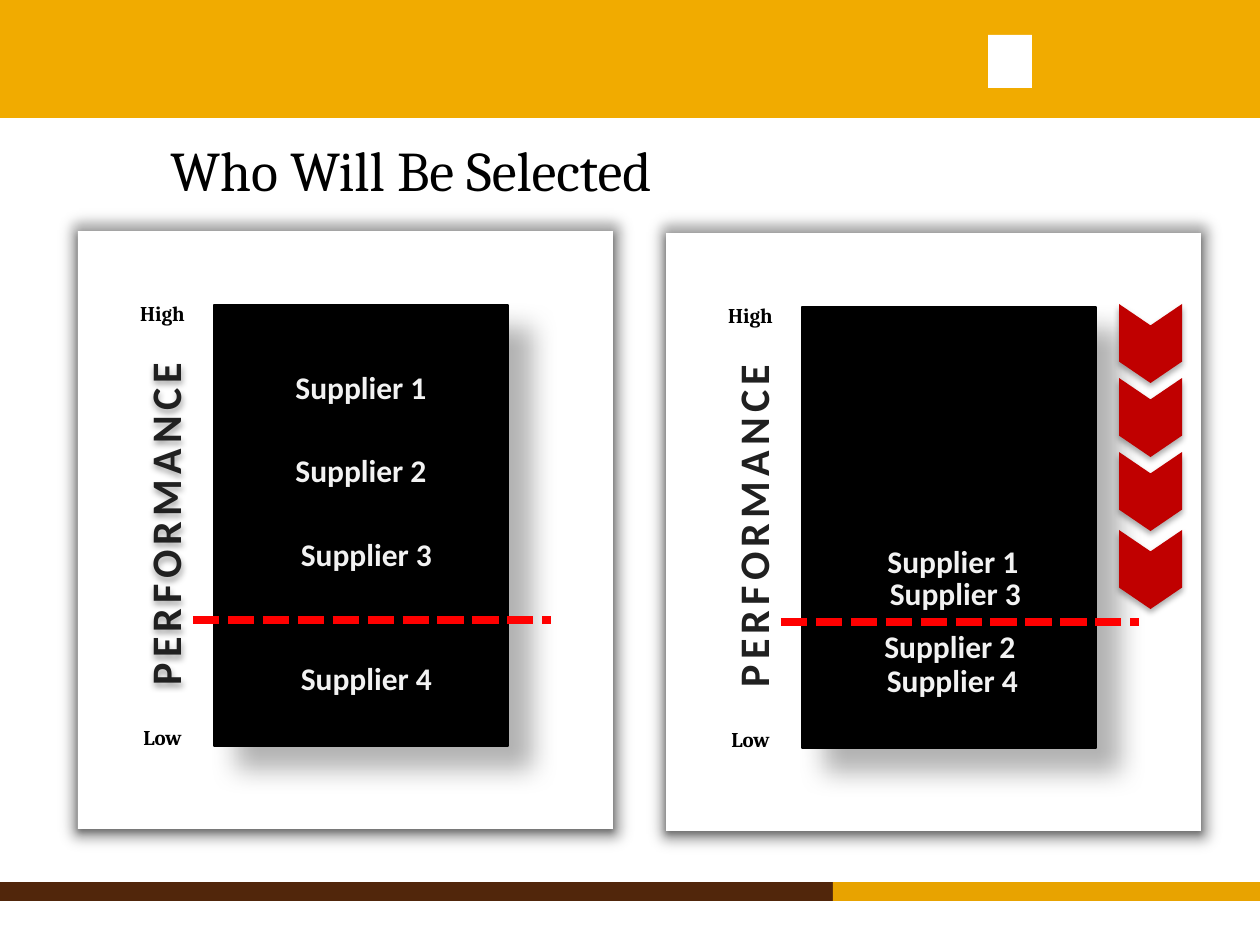
"""Build the supplier selection slide with two performance panels."""
from dataclasses import dataclass

from lxml import etree
from pptx import Presentation
from pptx.dml.color import RGBColor
from pptx.enum.dml import MSO_LINE
from pptx.enum.shapes import MSO_CONNECTOR, MSO_SHAPE
from pptx.enum.text import MSO_AUTO_SIZE, PP_ALIGN
from pptx.oxml.ns import qn
from pptx.util import Emu, Pt

RECT, CHEVRON = MSO_SHAPE.RECTANGLE, MSO_SHAPE.CHEVRON
STRAIGHT, DASHED = MSO_CONNECTOR.STRAIGHT, MSO_LINE.SQUARE_DOT
LEFT, CENTER = PP_ALIGN.LEFT, PP_ALIGN.CENTER
FIT = MSO_AUTO_SIZE.SHAPE_TO_FIT_TEXT


@dataclass(frozen=True)
class Theme:
    banner: str = "F1AB00"
    brown: str = "51260B"
    gold: str = "E8A300"
    black: str = "000000"
    white: str = "FFFFFF"
    frame: str = "A6A6A6"
    supplier: str = "F2F2F2"
    axis: str = "202020"
    cutoff: str = "FF0000"
    chevron: str = "C00000"
    serif: str = "Cambria"
    sans: str = "Calibri"
    title_size: int = 32
    axis_size: int = 24
    supplier_size: int = 18
    scale_size: int = 12


THEME = Theme()
CARD_SHADOW = dict(alpha=32, blur=3.5, distance=2.2, angle=90)
CHART_SHADOW = dict(alpha=30, blur=15, distance=18, angle=45)

TITLE = "Who Will Be Selected"
AXIS = "PERFORMANCE"
SCALE = [("High", 294), ("Low", 718)]
BANDS = [
    ((0, 0, 1260, 118), THEME.banner),
    ((988, 35, 44, 53), THEME.white),
    ((0, 882, 1008, 19), THEME.brown),
    ((833, 882, 427, 19), THEME.gold),
]
PANELS = [
    dict(origin=(0, 0), axis_shadow=CARD_SHADOW, chevron_tops=[], suppliers=[
        ("Supplier 1", 214, 362, 294),
        ("Supplier 2", 214, 445, 294),
        ("Supplier 3", 214, 529, 305),
        ("Supplier 4", 214, 653, 305),
    ]),
    dict(origin=(588, 2), axis_shadow=None, chevron_tops=[310, 384, 458, 536], suppliers=[
        ("Supplier 2", 215, 619, 294),
        ("Supplier 4", 212, 653, 305),
        ("Supplier 1", 218, 534, 294),
        ("Supplier 3", 215, 566, 305),
    ]),
]


def px(length):
    return Emu(round(length * 914400 / 126))


def place(box, origin):
    left, top, width, height = box
    return [px(n) for n in (left + origin[0], top + origin[1], width, height)]


def add_effect(shape, tag, **attributes):
    effects = shape._element.spPr.find(qn("a:effectLst"))
    return etree.SubElement(effects, qn(tag), {k: str(v) for k, v in attributes.items()})


def add_shadow(shape, alpha, blur, distance, angle):
    shadow = add_effect(shape, "a:outerShdw", blurRad=Pt(blur), dist=Pt(distance),
                        dir=angle * 60000, algn="ctr", rotWithShape=0)
    color = etree.SubElement(shadow, qn("a:srgbClr"), val=THEME.black)
    etree.SubElement(color, qn("a:alpha"), val=str(alpha * 1000))


def add_block(slide, box, fill, origin=(0, 0), preset=RECT, line=None, shadow=None):
    block = slide.shapes.add_shape(preset, *place(box, origin))
    block.fill.solid()
    block.fill.fore_color.rgb = RGBColor.from_string(fill)
    if line:
        block.line.color.rgb = RGBColor.from_string(line)
        block.line.width = Pt(0.75)
    else:
        block.line.fill.background()
    block.shadow.inherit = False
    if shadow:
        add_shadow(block, **shadow)
    return block


def add_text(slide, text, box, *, size, font, color, origin=(0, 0), bold=True,
             align=CENTER, rotation=0, spacing=0, shadow=None):
    label = slide.shapes.add_textbox(*place(box, origin))
    label.rotation = rotation
    frame = label.text_frame
    frame.word_wrap = True
    frame.auto_size = FIT
    paragraph = frame.paragraphs[0]
    paragraph.alignment = align
    run = paragraph.add_run()
    run.text = text
    run.font.size = Pt(size)
    run.font.name = font
    run.font.bold = bold
    run.font.color.rgb = RGBColor.from_string(color)
    if spacing:
        run._r.get_or_add_rPr().set("spc", str(spacing * 100))
    if shadow:
        label.shadow.inherit = False
        add_shadow(label, **shadow)


def add_cutoff(slide, origin):
    left, top = origin
    cutoff = slide.shapes.add_connector(
        STRAIGHT, px(left + 193), px(top + 620), px(left + 551), px(top + 620))
    cutoff.line.color.rgb = RGBColor.from_string(THEME.cutoff)
    cutoff.line.width = Pt(5)
    cutoff.line.dash_style = DASHED
    etree.SubElement(cutoff._element.spPr, qn("a:effectLst"))


def add_panel(slide, origin, axis_shadow, chevron_tops, suppliers):
    frame = add_block(slide, (53, 204, 588, 655), THEME.frame, origin)
    add_effect(frame, "a:softEdge", rad=px(16))
    add_block(slide, (78, 231, 535, 598), THEME.white, origin, shadow=CARD_SHADOW)
    add_block(slide, (214, 305, 294, 441), THEME.black, origin,
              line=THEME.black, shadow=CHART_SHADOW)
    for name, left, top, width in suppliers:
        add_text(slide, name, (left, top, width, 50), origin=origin,
                 size=THEME.supplier_size, font=THEME.sans, color=THEME.supplier)
    for level, top in SCALE:
        add_text(slide, level, (110, top, 105, 38), origin=origin,
                 size=THEME.scale_size, font=THEME.serif, color=THEME.black)
    add_cutoff(slide, origin)
    add_text(slide, AXIS, (-64, 499, 444, 50), origin=origin, size=THEME.axis_size,
             font=THEME.sans, color=THEME.axis, rotation=270, spacing=3,
             shadow=axis_shadow)
    for top in chevron_tops:
        chevron = add_block(slide, (523, top, 79, 63), THEME.chevron, origin,
                            preset=CHEVRON, shadow=CARD_SHADOW)
        chevron.adjustments[0] = 0.34
        chevron.rotation = 90


def main():
    deck = Presentation()
    deck.slide_width, deck.slide_height = px(1260), px(945)
    slide = deck.slides.add_slide(deck.slide_layouts[6])
    for box, fill in BANDS:
        add_block(slide, box, fill)
    add_text(slide, TITLE, (158, 129, 1056, 81), size=THEME.title_size,
             font=THEME.serif, color=THEME.black, bold=False, align=LEFT)
    for panel in PANELS:
        add_panel(slide, **panel)
    deck.save("out.pptx")


if __name__ == "__main__":
    main()
